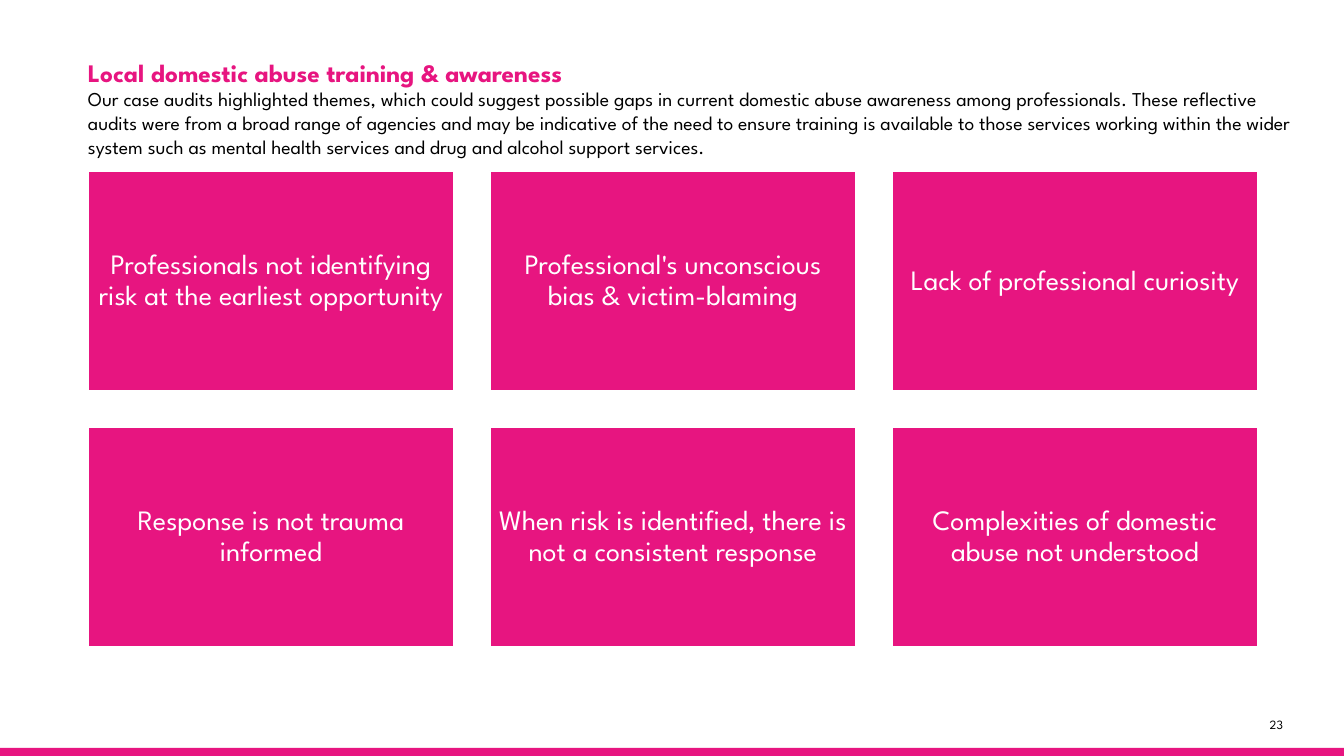
from pptx import Presentation
from pptx.dml.color import RGBColor
from pptx.enum.shapes import MSO_SHAPE
from pptx.enum.text import MSO_ANCHOR, PP_ALIGN
from pptx.util import Pt

RECTANGLE = MSO_SHAPE.RECTANGLE
MIDDLE, BOTTOM = MSO_ANCHOR.MIDDLE, MSO_ANCHOR.BOTTOM
LEFT, CENTER, RIGHT = PP_ALIGN.LEFT, PP_ALIGN.CENTER, PP_ALIGN.RIGHT

EMU_PER_PX = 914400 / 100.8
SLIDE_WIDTH, SLIDE_HEIGHT = 1344, 756
FONT = "League Spartan"
COLORS = {"pink": "E71580", "white": "FFFFFF", "black": "000000"}

HEADING = "Local domestic abuse training & awareness"
INTRODUCTION = (
    "Our case audits highlighted themes, which could suggest possible gaps in current "
    "domestic abuse awareness among professionals. These reflective audits were from a "
    "broad range of agencies and may be indicative of the need to ensure training is "
    "available to those services working within the wider system such as mental health "
    "services and drug and alcohol support services."
)
THEMES = [
    "Professionals not identifying risk at the earliest opportunity",
    "Professional's unconscious bias & victim-blaming",
    "Lack of professional curiosity",
    "Response is not trauma informed",
    "When risk is identified, there is not a consistent response",
    "Complexities of domestic abuse not understood",
]


def px(length):
    return round(length * EMU_PER_PX)


def color(name):
    return RGBColor.from_string(COLORS[name])


def add_rectangle(slide, box):
    shape = slide.shapes.add_shape(RECTANGLE, *map(px, box))
    shape.shadow.inherit = False
    shape.fill.solid()
    shape.fill.fore_color.rgb = color("pink")
    shape.line.fill.background()
    return shape


def prepare_frame(shape, anchor, inset=0):
    frame = shape.text_frame
    frame.word_wrap = True
    frame.vertical_anchor = anchor
    frame.margin_left = frame.margin_right = px(inset)
    frame.margin_top = frame.margin_bottom = px(inset)
    return frame


def write(paragraph, text, size, color_name, alignment=LEFT, bold=False):
    paragraph.text = text
    paragraph.alignment = alignment
    for run in paragraph.runs:
        run.font.name = FONT
        run.font.size = Pt(size)
        run.font.bold = bold
        run.font.color.rgb = color(color_name)


def add_title(slide, box):
    frame = prepare_frame(slide.shapes.add_textbox(*map(px, box)), BOTTOM)
    write(frame.paragraphs[0], HEADING, 18, "pink", bold=True)
    write(frame.add_paragraph(), INTRODUCTION, 14, "black")


def add_theme_card(slide, box, theme):
    card = add_rectangle(slide, box)
    card.line.color.rgb = color("white")
    card.line.width = Pt(0.85)
    paragraph = prepare_frame(card, MIDDLE, inset=8).paragraphs[0]
    write(paragraph, theme, 20, "white", CENTER)
    paragraph.line_spacing = 0.9


def add_theme_grid(slide, box, columns=3, gap=36):
    left, top, width, height = box
    rows = len(THEMES) // columns
    card_width = (width - gap * (columns - 1)) / columns
    card_height = (height - gap * (rows - 1)) / rows
    for index, theme in enumerate(THEMES):
        row, column = divmod(index, columns)
        card_left = left + column * (card_width + gap)
        card_top = top + row * (card_height + gap)
        add_theme_card(slide, (card_left, card_top, card_width, card_height), theme)


def add_footer(slide, box):
    left, top, width, height = box
    bar_height = 8
    add_rectangle(slide, (left, top + height - bar_height, width, bar_height))
    number_box = (left + width - 97, top, 36, 15)
    number = slide.shapes.add_textbox(*map(px, number_box))
    write(prepare_frame(number, BOTTOM).paragraphs[0], "23", 9, "black", RIGHT)


def main():
    presentation = Presentation()
    presentation.slide_width = px(SLIDE_WIDTH)
    presentation.slide_height = px(SLIDE_HEIGHT)
    slide = presentation.slides.add_slide(presentation.slide_layouts[6])
    add_footer(slide, (0, 717, SLIDE_WIDTH, 39))
    add_title(slide, (88, 20, 1215, 138))
    add_theme_grid(slide, (88, 171, 1170, 476))
    presentation.save("out.pptx")


if __name__ == "__main__":
    main()
